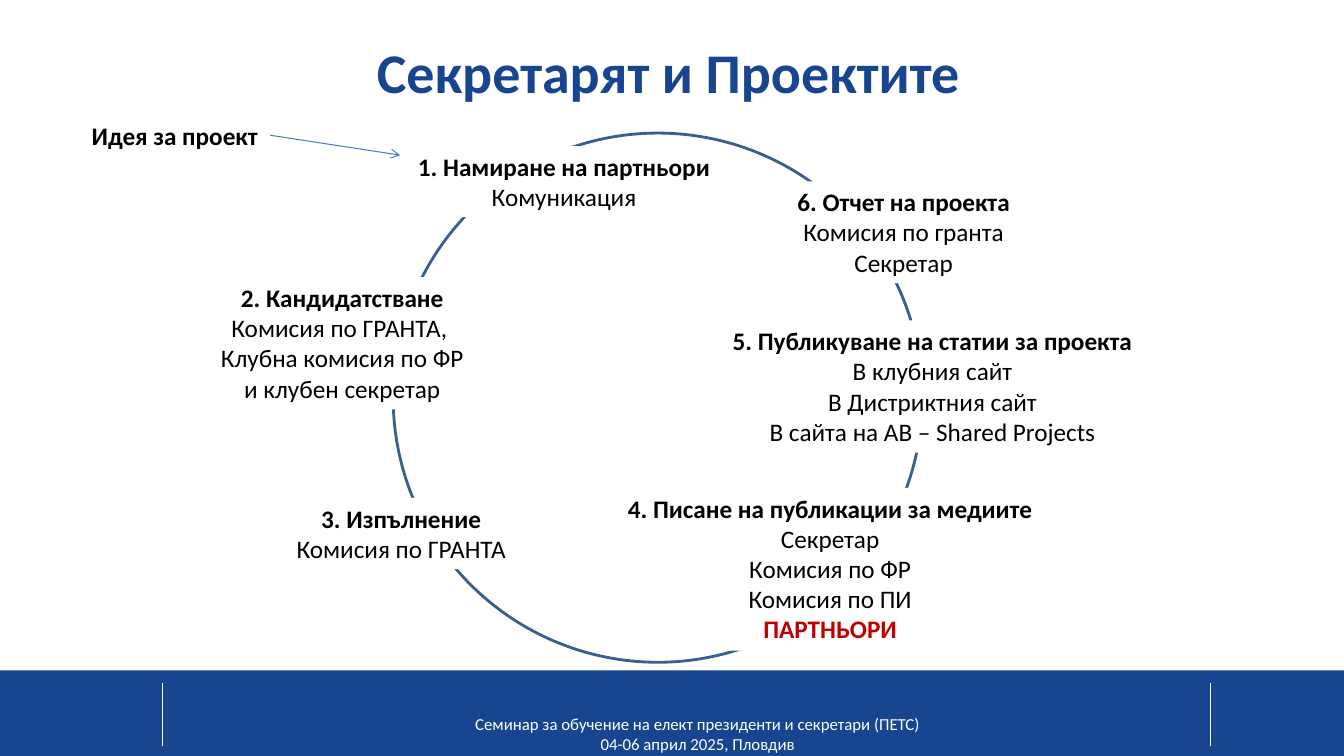
"""Build the project-cycle slide with its six steps around a ring."""
from lxml import etree
from pptx import Presentation
from pptx import util as u
from pptx.dml.color import RGBColor
from pptx.enum import shapes, text
from pptx.oxml.ns import qn

SLIDE_W, SLIDE_H = u.Inches(13.33), u.Inches(7.5)
BLUE, WHITE, BLACK, RED = "17458F", "FFFFFF", "000000", "C00000"
CENTER, LEFT = text.PP_ALIGN.CENTER, text.PP_ALIGN.LEFT
PAD, ROW = 1.33, 4.04

STEPS = [
    (30.23, 19.33, 23.48, ["1. Намиране на партньори", "Комуникация"]),
    (15.6, 36.67, 19.73, ["2. Кандидатстване", "Комисия по ГРАНТА, \vКлубна комисия по ФР",
                          "и клубен секретар"]),
    (21.23, 65.87, 17.25, ["3. Изпълнение", "Комисия по ГРАНТА"]),
    (45.83, 64.53, 31.88, ["4. Писане на публикации за медиите", "Секретар",
                           "Комисия по ФР", "Комисия по ПИ", "ПАРТНЬОРИ"]),
    (53.63, 42.4, 31.5, ["5. Публикуване на статии за проекта", "В клубния сайт",
                         "В Дистриктния сайт", "В сайта на АВ – Shared Projects"]),
    (58.5, 24, 17.48, ["6. Отчет на проекта", "Комисия по гранта", "Секретар"]),
]


def color(value):
    """Turn a hex string into a colour."""
    return RGBColor.from_string(value)


def across(percent):
    """Give a share of the slide's width."""
    return round(SLIDE_W * percent / 100)


def down(percent):
    """Give a share of the slide's height."""
    return round(SLIDE_H * percent / 100)


def place(left, top, width, height):
    """Turn four shares into lengths."""
    return across(left), down(top), across(width), down(height)


def add_panel(slide, kind, area, fill=None, line=None):
    """Add a flat preset shape."""
    panel = slide.shapes.add_shape(kind, *place(*area))
    panel.shadow.inherit = False
    if fill:
        panel.fill.solid()
        panel.fill.fore_color.rgb = color(fill)
    else:
        panel.fill.background()
    if line:
        panel.line.color.rgb = color(line)
        panel.line.width = u.Pt(2)
    else:
        panel.line.fill.background()
    return panel


def write(frame, lines, size, ink, align=CENTER, bold_rows=()):
    """Fill a text frame, one paragraph a line."""
    for row, words in enumerate(lines):
        paragraph = frame.paragraphs[0] if row == 0 else frame.add_paragraph()
        paragraph.text = words
        paragraph.alignment = align
        font = paragraph.font
        font.name, font.size, font.bold = "Calibri", u.Pt(size), row in bold_rows
        font.color.rgb = color(RED if words == "ПАРТНЬОРИ" else ink)


def add_step(slide, left, top, width, lines, align=CENTER):
    """Add a white label as tall as its lines, with a bold heading."""
    rows = sum(words.count("\v") + 1 for words in lines)
    label = add_panel(slide, shapes.MSO_SHAPE.RECTANGLE,
                      (left, top, width, PAD + ROW * rows), WHITE)
    frame = label.text_frame
    frame.word_wrap = False
    frame.auto_size = text.MSO_AUTO_SIZE.SHAPE_TO_FIT_TEXT
    frame.vertical_anchor = text.MSO_ANCHOR.TOP
    bold_rows = [row for row, words in enumerate(lines) if row == 0 or words == "ПАРТНЬОРИ"]
    write(frame, lines, 18, BLACK, align, bold_rows)
    return label


def add_line(slide, start, end, ink):
    """Add a thin straight line without shadow."""
    line = slide.shapes.add_connector(
        shapes.MSO_CONNECTOR.STRAIGHT,
        across(start[0]), down(start[1]), across(end[0]), down(end[1]))
    line.line.color.rgb = color(ink)
    line.line.width = u.Pt(0.75)
    etree.SubElement(line._element.spPr, qn("a:effectLst"))
    return line


def add_footer(slide):
    """Add the blue band with the event's name and two rules."""
    band = add_panel(slide, shapes.MSO_SHAPE.RECTANGLE, (0, 88.67, 100, 11.33), BLUE)
    frame = band.text_frame
    frame.word_wrap = True
    frame.vertical_anchor = text.MSO_ANCHOR.BOTTOM
    frame.margin_left, frame.margin_bottom = u.Inches(0.61), u.Inches(0.02)
    write(frame, ["Семинар за обучение на елект президенти и секретари (ПЕТС)",
                  "04-06 април 2025, Пловдив"], 12, WHITE)
    for rule in (12.08, 90.08):
        add_line(slide, (rule, 90.4), (rule, 98.67), WHITE)


def add_title(slide):
    """Add the heading."""
    frame = slide.shapes.add_textbox(*place(0, 4.67, 99.45, 9.47)).text_frame
    frame.word_wrap = True
    frame.vertical_anchor = text.MSO_ANCHOR.MIDDLE
    write(frame, ["Секретарят и Проектите"], 40, BLUE, bold_rows=(0,))


def add_idea(slide):
    """Add the idea and its arrow into the cycle."""
    idea = add_step(slide, 6.08, 15.2, 14.02, ["Идея за проект"], LEFT)
    arrow = add_line(slide, (20.1, 17.87), (29.78, 20.53), "4B7EBC")
    arrow.begin_connect(idea, 3)
    etree.SubElement(arrow.line._get_or_add_ln(), qn("a:tailEnd"), type="arrow")


def main():
    """Build and save the slide."""
    deck = Presentation()
    deck.slide_width, deck.slide_height = SLIDE_W, SLIDE_H
    slide = deck.slides.add_slide(deck.slide_layouts[6])
    add_footer(slide)
    add_panel(slide, shapes.MSO_SHAPE.OVAL, (29.25, 17.6, 39.38, 70), line="3A5F8C")
    for step in STEPS:
        add_step(slide, *step)
    add_title(slide)
    add_idea(slide)
    deck.save("out.pptx")


if __name__ == "__main__":
    main()
